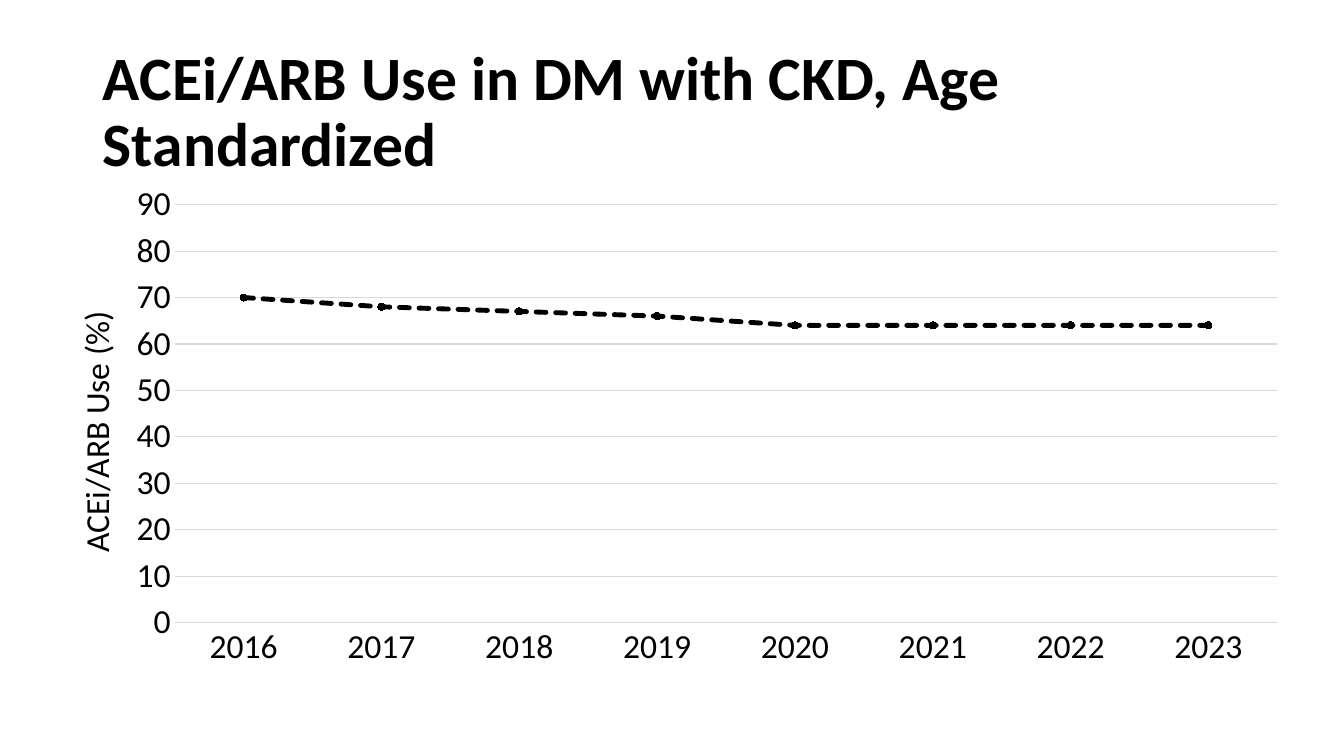
from lxml.etree import SubElement
from pptx import Presentation
from pptx.chart.data import CategoryChartData as ChartData
from pptx.dml.color import RGBColor
from pptx.enum.chart import XL_CHART_TYPE as Kind, XL_MARKER_STYLE as Mark, XL_TICK_MARK as Tick
from pptx.enum.dml import MSO_LINE as Dash
from pptx.enum.text import MSO_ANCHOR as Anchor, MSO_AUTO_SIZE as Fit
from pptx.oxml.ns import qn
from pptx.util import Inches, Pt

BLACK, GREY = "000000", "D9D9D9"


def paint(item, color):
    """Give a fill, or the fill of a line, one solid colour."""
    item.solid()
    item.fore_color.rgb = RGBColor.from_string(color)


def write(frame, text, size=24, bold=False, color=BLACK):
    frame.text = text
    line = frame.paragraphs[0]
    font = line.runs[0].font
    font.name, font.size, font.bold = "Calibri", Pt(size), bold
    font.color.rgb = RGBColor.from_string(color)
    return line


deck = Presentation()
deck.slide_width, deck.slide_height = Inches(13.33), Inches(7.5)
slide = deck.slides.add_slide(deck.slide_layouts[5])

title = slide.shapes.title
title.left, title.top = Inches(0.92), Inches(0.4)
title.width, title.height = Inches(12), Inches(1.45)
head = title.text_frame
head.word_wrap, head.auto_size = True, Fit.NONE
head.vertical_anchor = Anchor.MIDDLE
line = write(head, "ACEi/ARB Use in DM with CKD, Age Standardized", size=44, bold=True)
line.alignment, line.line_spacing = 1, 0.9

data = ChartData()
data.categories = [str(year) for year in range(2016, 2024)]
data.add_series("Series 1", [70, 68, 67, 66, 64, 64, 64, 64])
chart = slide.shapes.add_chart(
    Kind.LINE_MARKERS, Inches(0.42), Inches(1.73), Inches(12.5), Inches(5), data
).chart
chart.has_legend = chart.has_title = False
chart.font.name, chart.font.size = "Calibri", Pt(24)
chart.font.color.rgb = RGBColor.from_string(BLACK)

years, share = chart.category_axis, chart.value_axis
for axis in (years, share):
    axis.major_tick_mark = axis.minor_tick_mark = Tick.NONE
share.minimum_scale, share.maximum_scale, share.major_unit = 0, 90, 10
share.tick_labels.number_format = "0"
share.tick_labels.number_format_is_linked = False
share.format.line.fill.background()
for rule in (years.format.line, share.major_gridlines.format.line):
    paint(rule.fill, GREY)
    rule.width = Pt(0.75)
write(share.axis_title.text_frame, "ACEi/ARB Use (%)")

plot = chart.plots[0]
plot.vary_by_categories = False
trend = plot.series[0]
trend.smooth = False
stroke = trend.format.line
paint(stroke.fill, BLACK)
stroke.width, stroke.dash_style = Pt(3.5), Dash.SQUARE_DOT
stroke._ln.set("cap", "rnd")
trend.marker.style, trend.marker.size = Mark.CIRCLE, 5
paint(trend.marker.format.fill, BLACK)
paint(trend.marker.format.line.fill, BLACK)

# Fixed places, as fractions of the chart frame
area = chart._chartSpace.chart.plotArea
label = share.axis_title._element
for owner, spot in (
    (area, {"layoutTarget": "inner", "xMode": "edge", "yMode": "edge",
            "x": 0.105, "y": 0.06, "w": 0.875, "h": 0.83}),
    (label, {"xMode": "edge", "yMode": "edge", "x": 0.02, "y": 0.26}),
):
    layout = owner.get_or_add_layout() if hasattr(owner, "get_or_add_layout") else owner.find(qn("c:layout"))
    if layout is None:
        layout = SubElement(owner, qn("c:layout"))
        owner.insert(0, layout)
    for old in list(layout):
        layout.remove(old)
    manual = SubElement(layout, qn("c:manualLayout"))
    for key, val in spot.items():
        SubElement(manual, qn("c:" + key)).set("val", str(val))

deck.save("out.pptx")
